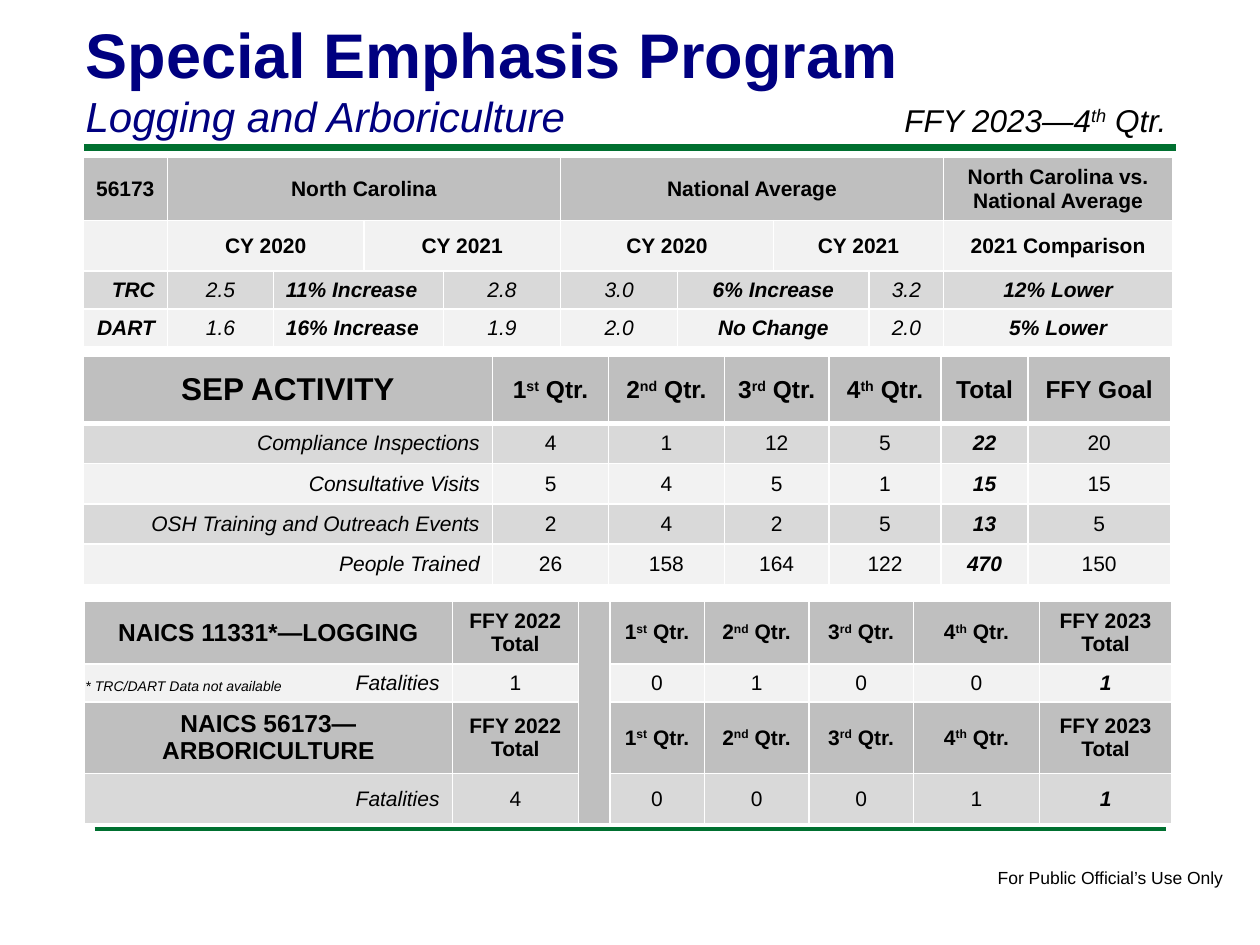
from dataclasses import dataclass, replace

from lxml.etree import SubElement
from pptx import Presentation
from pptx.dml.color import RGBColor
from pptx.enum.shapes import MSO_CONNECTOR
from pptx.enum.text import MSO_ANCHOR, MSO_AUTO_SIZE, PP_ALIGN
from pptx.oxml.ns import qn
from pptx.util import Inches, Pt


@dataclass(frozen=True)
class Theme:
    font: str = "Arial"
    navy: str = "000080"
    green: str = "007030"
    black: str = "000000"
    border: str = "FFFFFF"
    header: str = "BFBFBF"
    dark_band: str = "D9D9D9"
    light_band: str = "F2F2F2"
    title_size: int = 36
    subtitle_size: int = 24
    large_size: int = 18
    heading_size: int = 14
    body_size: int = 12
    footer_size: int = 10
    note_size: int = 8


THEME = Theme()


@dataclass(frozen=True)
class Style:
    size: int = THEME.body_size
    bold: bool = False
    italic: bool = False
    color: str = THEME.black
    align: PP_ALIGN = PP_ALIGN.CENTER


@dataclass(frozen=True)
class Cell:
    text: str
    style: Style
    columns: int = 1
    rows: int = 1


@dataclass(frozen=True)
class Row:
    height: float
    fill: str
    cells: list[Cell | None]  # None is covered by a merged cell
    bottom_border: int = 1


@dataclass(frozen=True)
class Grid:
    left: float
    top: float
    widths: list[float]
    rows: list[Row]


VALUE = Style()
HEAD = Style(bold=True)
BIG_HEAD = replace(HEAD, size=THEME.heading_size)
LABEL = Style(italic=True, align=PP_ALIGN.RIGHT)
BOLD_LABEL = replace(LABEL, bold=True)
RATE = Style(italic=True)
RESULT = Style(bold=True, italic=True)
LEFT_RESULT = replace(RESULT, align=PP_ALIGN.LEFT)

# A pair of carets marks superscript
QUARTERS = ["1^st^ Qtr.", "2^nd^ Qtr.", "3^rd^ Qtr.", "4^th^ Qtr."]


def write(paragraph, text: str, style: Style) -> None:
    paragraph.alignment = style.align
    for index, part in enumerate(text.split("^") if text else []):
        run = paragraph.add_run()
        run.text = part
        font = run.font
        font.name, font.size = THEME.font, Pt(style.size)
        font.bold, font.italic = style.bold, style.italic
        font.color.rgb = RGBColor.from_string(style.color)
        if index % 2:
            run._r.get_or_add_rPr().set("baseline", "30000")


def add_text(slide, left: float, top: float, width: float, height: float,
             text: str, style: Style, wrap: bool = False) -> None:
    box = slide.shapes.add_textbox(Inches(left), Inches(top), Inches(width), Inches(height))
    box.text_frame.word_wrap = wrap
    write(box.text_frame.paragraphs[0], text, replace(style, align=PP_ALIGN.LEFT))


def add_rule(slide, left: float, right: float, y: float, weight: int) -> None:
    rule = slide.shapes.add_connector(
        MSO_CONNECTOR.STRAIGHT, Inches(left), Inches(y), Inches(right), Inches(y))
    rule.line.color.rgb = RGBColor.from_string(THEME.green)
    rule.line.width = Pt(weight)
    SubElement(rule._element.spPr, qn("a:effectLst"))


def format_cell(cell, fill: str, bottom_border: int) -> None:
    properties = cell._tc.get_or_add_tcPr()
    for side in ("L", "R", "T", "B"):
        weight = Pt(bottom_border if side == "B" else 1)
        line = SubElement(properties, qn(f"a:ln{side}"), w=str(weight))
        solid = SubElement(line, qn("a:solidFill"))
        SubElement(solid, qn("a:srgbClr"), val=THEME.border)
    cell.fill.solid()
    cell.fill.fore_color.rgb = RGBColor.from_string(fill)
    cell.vertical_anchor = MSO_ANCHOR.MIDDLE


def add_grid(slide, grid: Grid) -> None:
    table = slide.shapes.add_table(
        len(grid.rows), len(grid.widths), Inches(grid.left), Inches(grid.top),
        Inches(sum(grid.widths)), Inches(sum(row.height for row in grid.rows))).table
    table.first_row = table.horz_banding = False
    for column, width in zip(table.columns, grid.widths):
        column.width = Inches(width)
    for r, row in enumerate(grid.rows):
        table.rows[r].height = Inches(row.height)
        for c, content in enumerate(row.cells):
            cell = table.cell(r, c)
            format_cell(cell, row.fill, row.bottom_border)
            if content is None:
                continue
            write(cell.text_frame.paragraphs[0], content.text, content.style)
            if content.columns * content.rows > 1:
                cell.merge(table.cell(r + content.rows - 1, c + content.columns - 1))


def cells(texts: list[str], style: Style) -> list[Cell]:
    return [Cell(text, style) for text in texts]


def wide(text: str, columns: int, style: Style = HEAD) -> list[Cell | None]:
    return [Cell(text, style, columns)] + [None] * (columns - 1)


def rate_row(fill: str, label: str, state: list[str], nation: list[str], comparison: str) -> Row:
    return Row(0.3, fill, [
        Cell(label, BOLD_LABEL),
        Cell(state[0], RATE), *wide(state[1], 2, LEFT_RESULT), Cell(state[2], RATE),
        Cell(nation[0], RATE), *wide(nation[1], 2, RESULT), Cell(nation[2], RATE),
        Cell(comparison, RESULT)])


def activity_row(fill: str, label: str, counts: list[str], total: str, goal: str) -> Row:
    return Row(0.32, fill, [Cell(label, LABEL), *cells(counts, VALUE),
                            Cell(total, RESULT), Cell(goal, VALUE)])


def fatality_rows(name: str, height: float, fill: str, previous: str, counts: list[str],
                  total: str, divider: Cell | None = None) -> list[Row]:
    return [
        Row(height, THEME.header, [Cell(name, BIG_HEAD), Cell("FFY 2022 Total", HEAD), divider,
                                   *cells(QUARTERS, HEAD), Cell("FFY 2023 Total", HEAD)]),
        Row(0.3, fill, [Cell("Fatalities", LABEL), Cell(previous, VALUE), None,
                        *cells(counts, VALUE), Cell(total, RESULT)])]


RATES = Grid(0.66, 1.25, [0.67, 0.84, 0.72, 0.63, 0.93, 0.93, 0.76, 0.76, 0.59, 1.82], [
    Row(0.5, THEME.header, [Cell("56173", HEAD), *wide("North Carolina", 4),
                            *wide("National Average", 4),
                            Cell("North Carolina vs. National Average", HEAD)]),
    Row(0.4, THEME.light_band, [Cell("", HEAD), *(wide("CY 2020", 2) + wide("CY 2021", 2)) * 2,
                                Cell("2021 Comparison", HEAD)]),
    rate_row(THEME.dark_band, "TRC", ["2.5", "11% Increase", "2.8"],
             ["3.0", "6% Increase", "3.2"], "12% Lower"),
    rate_row(THEME.light_band, "DART", ["1.6", "16% Increase", "1.9"],
             ["2.0", "No Change", "2.0"], "5% Lower")])

ACTIVITY = Grid(0.66, 2.83, [3.25, 0.92, 0.92, 0.83, 0.89, 0.69, 1.13], [
    Row(0.53, THEME.header, [Cell("SEP ACTIVITY", replace(HEAD, size=THEME.large_size)),
                             *cells(QUARTERS + ["Total", "FFY Goal"], BIG_HEAD)], 3),
    activity_row(THEME.dark_band, "Compliance Inspections", ["4", "1", "12", "5"], "22", "20"),
    activity_row(THEME.light_band, "Consultative Visits", ["5", "4", "5", "1"], "15", "15"),
    activity_row(THEME.dark_band, "OSH Training and Outreach Events",
                 ["2", "4", "2", "5"], "13", "5"),
    activity_row(THEME.light_band, "People Trained", ["26", "158", "164", "122"], "470", "150")])

FATALITIES = Grid(0.67, 4.77, [2.92, 1, 0.25, 0.75, 0.83, 0.83, 1, 1.05], [
    *fatality_rows("NAICS 11331*—LOGGING", 0.5, THEME.light_band, "1",
                   ["0", "1", "0", "0"], "1", Cell("", HEAD, rows=4)),
    *fatality_rows("NAICS 56173—ARBORICULTURE", 0.56, THEME.dark_band, "4",
                   ["0", "0", "0", "1"], "1")])


def add_title(slide) -> None:
    title = slide.shapes.title
    title.left, title.top = Inches(0.58), Inches(0.06)
    title.width, title.height = Inches(8.25), Inches(1.11)
    frame = title.text_frame
    frame.auto_size = MSO_AUTO_SIZE.NONE
    frame.vertical_anchor = MSO_ANCHOR.BOTTOM
    heading = Style(THEME.title_size, bold=True, color=THEME.navy, align=PP_ALIGN.LEFT)
    write(frame.paragraphs[0], "Special Emphasis Program", heading)
    write(frame.add_paragraph(), "Logging and Arboriculture",
          replace(heading, size=THEME.subtitle_size, bold=False, italic=True))


def main() -> None:
    presentation = Presentation()
    presentation.slide_width, presentation.slide_height = Inches(10), Inches(7.5)
    slide = presentation.slides.add_slide(presentation.slide_layouts[5])
    # Frame: rules, footer and title
    add_rule(slide, 0.67, 9.33, 1.17, 4)
    add_rule(slide, 0.75, 9.25, 6.58, 2)
    add_text(slide, 7.82, 6.83, 2.01, 0.27, "For Public Official’s Use Only",
             Style(THEME.footer_size))
    add_title(slide)
    # Tables and their notes
    for grid in (ACTIVITY, FATALITIES, RATES):
        add_grid(slide, grid)
    add_text(slide, 0.58, 5.33, 1.78, 0.24, "* TRC/DART Data not available",
             Style(THEME.note_size, italic=True))
    add_text(slide, 7.08, 0.75, 2.5, 0.4, "FFY 2023—4^th^ Qtr.",
             Style(THEME.large_size, italic=True), wrap=True)
    presentation.save("out.pptx")


if __name__ == "__main__":
    main()
